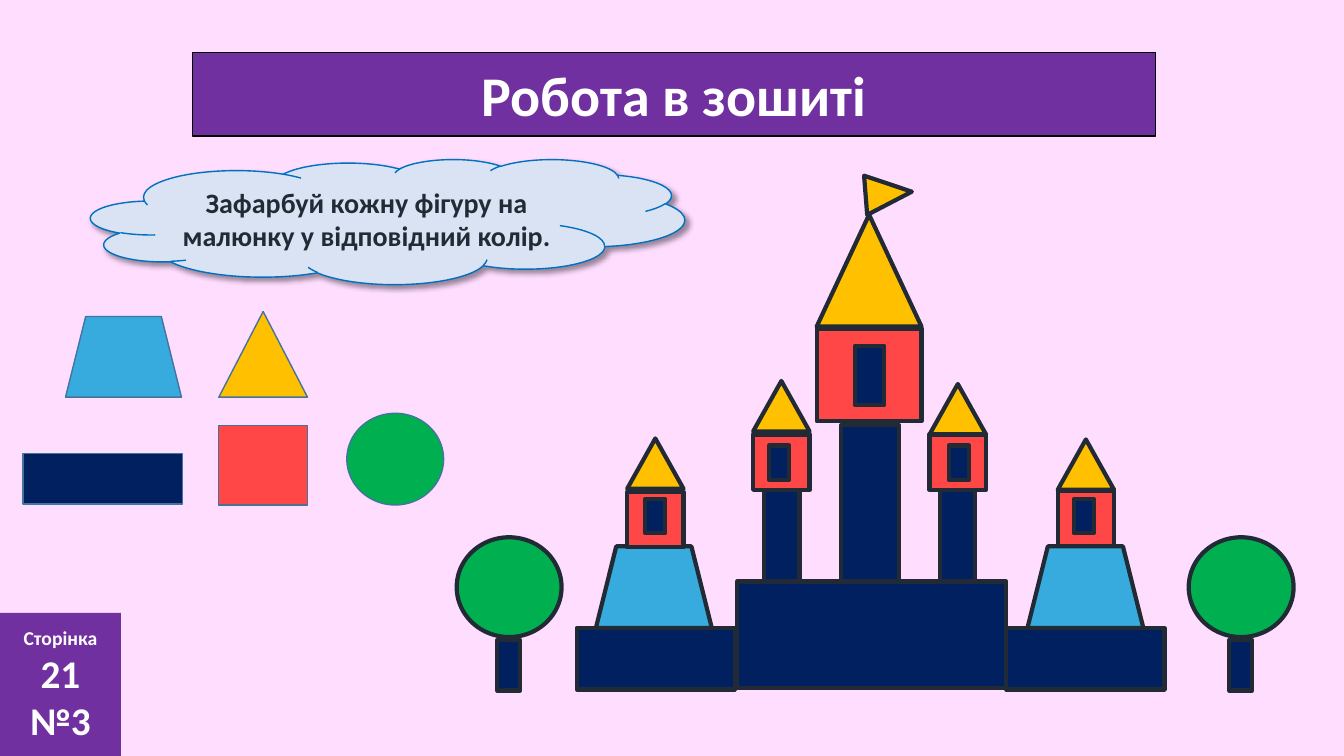
from dataclasses import dataclass

from lxml import etree
from pptx import Presentation
from pptx.dml.color import RGBColor
from pptx.enum.shapes import MSO_SHAPE
from pptx.enum.text import MSO_ANCHOR, PP_ALIGN
from pptx.oxml.ns import qn
from pptx.util import Inches, Pt

RECT = MSO_SHAPE.RECTANGLE
TRIANGLE = MSO_SHAPE.ISOSCELES_TRIANGLE
TRAPEZOID = MSO_SHAPE.TRAPEZOID
CIRCLE = MSO_SHAPE.OVAL
CLOUD = MSO_SHAPE.CLOUD
FLAG = MSO_SHAPE.FLOWCHART_MERGE
CENTER = PP_ALIGN.CENTER
MIDDLE = MSO_ANCHOR.MIDDLE

PINK, PURPLE, WHITE, BLACK = "FFDDFF", "7030A0", "FFFFFF", "000000"
NAVY, BLUE, YELLOW, RED, GREEN = "002060", "37ABDE", "FFC000", "FF4747", "00B050"
INK, SAMPLE_LINE = "222A35", "43739E"


@dataclass
class Part:
    kind: MSO_SHAPE
    x: float
    y: float
    w: float
    h: float
    color: str


@dataclass
class Tower:
    """A roof, a base, a red room and a window, stacked in that order."""
    x: float
    roof_y: float
    room_y: float
    window_x: float
    window_y: float
    base: Part
    w: float = 0.56
    roof_h: float = 0.5
    room_h: float = 0.55
    window_w: float = 0.2
    window_h: float = 0.34


SAMPLES = [
    Part(TRAPEZOID, 0.65, 3.14, 1.15, 0.8, BLUE),
    Part(TRIANGLE, 2.17, 3.09, 0.88, 0.85, YELLOW),
    Part(RECT, 0.23, 4.5, 1.58, 0.5, NAVY),
    Part(RECT, 2.17, 4.22, 0.88, 0.79, RED),
    Part(CIRCLE, 3.44, 4.1, 0.96, 0.91, GREEN),
]
INNER_TOWERS = [
    Tower(9.22, 3.81, 4.31, 9.41, 4.42, Part(RECT, 9.32, 4.86, 0.35, 0.91, NAVY)),
    Tower(7.47, 3.78, 4.31, 7.63, 4.42, Part(RECT, 7.58, 4.86, 0.35, 0.91, NAVY)),
    Tower(8.1, 2.13, 3.26, 8.48, 3.43, Part(RECT, 8.34, 4.22, 0.58, 1.57, NAVY),
          w=1.04, roof_h=1.11, room_h=0.92, window_w=0.29, window_h=0.59),
]
WALLS = [
    Part(RECT, 5.72, 6.23, 1.57, 0.61, NAVY),
    Part(RECT, 9.98, 6.23, 1.57, 0.61, NAVY),
    Part(RECT, 7.31, 5.77, 2.67, 1.06, NAVY),
]
OUTER_TOWERS = [
    Tower(10.49, 4.36, 4.87, 10.65, 4.95, Part(TRAPEZOID, 10.19, 5.42, 1.15, 0.81, BLUE)),
    Tower(6.22, 4.35, 4.88, 6.4, 4.95, Part(TRAPEZOID, 5.91, 5.42, 1.15, 0.81, BLUE)),
]
TREE_LEFTS = [4.53, 11.79]


def rgb(color: str) -> RGBColor:
    return RGBColor.from_string(color)


def paint(sp, fill: str, line: str | None, width: float) -> None:
    sp.fill.solid()
    sp.fill.fore_color.rgb = rgb(fill)
    if line is None:
        sp.line.fill.background()
    else:
        sp.line.color.rgb = rgb(line)
        sp.line.width = Pt(width)


def add_part(slide, part: Part, line: str | None = INK, width: float = 3):
    sp = slide.shapes.add_shape(part.kind, Inches(part.x), Inches(part.y),
                                Inches(part.w), Inches(part.h))
    sp.shadow.inherit = False
    paint(sp, part.color, line, width)
    return sp


def add_text(tf, text: str, *, size: float, color: str = WHITE) -> None:
    """Fill the first paragraph if it is empty, otherwise append one."""
    tf.word_wrap = True
    tf.vertical_anchor = MIDDLE
    p = tf.add_paragraph() if tf.text else tf.paragraphs[0]
    p.alignment = CENTER
    r = p.add_run()
    r.text = text
    r.font.name = "Calibri"
    r.font.size = Pt(size)
    r.font.bold = True
    r.font.color.rgb = rgb(color)


def add_shadow(sp) -> None:
    effects = sp._element.spPr.find(qn("a:effectLst"))
    shadow = etree.SubElement(effects, qn("a:outerShdw"), blurRad=str(Pt(4)),
                              dist=str(Pt(3)), dir=str(45 * 60000))
    color = etree.SubElement(shadow, qn("a:srgbClr"), val=BLACK)
    etree.SubElement(color, qn("a:alpha"), val="40000")


def add_tower(slide, t: Tower) -> None:
    for part in (
        Part(TRIANGLE, t.x, t.roof_y, t.w, t.roof_h, YELLOW),
        t.base,
        Part(RECT, t.x, t.room_y, t.w, t.room_h, RED),
        Part(RECT, t.window_x, t.window_y, t.window_w, t.window_h, NAVY),
    ):
        add_part(slide, part)


def add_castle(slide) -> None:
    flag = add_part(slide, Part(FLAG, 8.62, 1.69, 0.39, 0.46, YELLOW))
    flag.rotation = 265.5
    for tower in INNER_TOWERS:
        add_tower(slide, tower)
    for wall in WALLS:
        add_part(slide, wall)
    for tower in OUTER_TOWERS:
        add_tower(slide, tower)


def add_tree(slide, x: float) -> None:
    add_part(slide, Part(RECT, x + 0.4, 6.35, 0.23, 0.5, NAVY))
    add_part(slide, Part(CIRCLE, x, 5.33, 1.04, 0.99, GREEN))


def add_title(slide) -> None:
    title = slide.shapes.title
    title.left, title.top = Inches(1.91), Inches(0.52)
    title.width, title.height = Inches(9.55), Inches(0.83)
    paint(title, PURPLE, BLACK, 1)
    add_text(title.text_frame, "Робота в зошиті", size=40)


def main() -> None:
    prs = Presentation()
    prs.slide_width, prs.slide_height = Inches(13.33), Inches(7.5)
    slide = prs.slides.add_slide(prs.slide_layouts[5])
    slide.background.fill.solid()
    slide.background.fill.fore_color.rgb = rgb(PINK)

    add_title(slide)
    for sample in SAMPLES:
        add_part(slide, sample, SAMPLE_LINE, 1)
    add_castle(slide)
    for x in TREE_LEFTS:
        add_tree(slide, x)

    cloud = add_part(slide, Part(CLOUD, 0.9, 1.58, 5.89, 1.24, "DAE3F3"), "0070C0", 1)
    add_shadow(cloud)
    add_text(cloud.text_frame, "Зафарбуй кожну фігуру на малюнку у відповідний колір.",
             size=20, color=INK)

    page = add_part(slide, Part(RECT, 0, 6.08, 1.2, 1.42, PURPLE), None)
    add_text(page.text_frame, "Сторінка", size=14)
    add_text(page.text_frame, "21 №3", size=28)

    prs.save("out.pptx")


if __name__ == "__main__":
    main()
